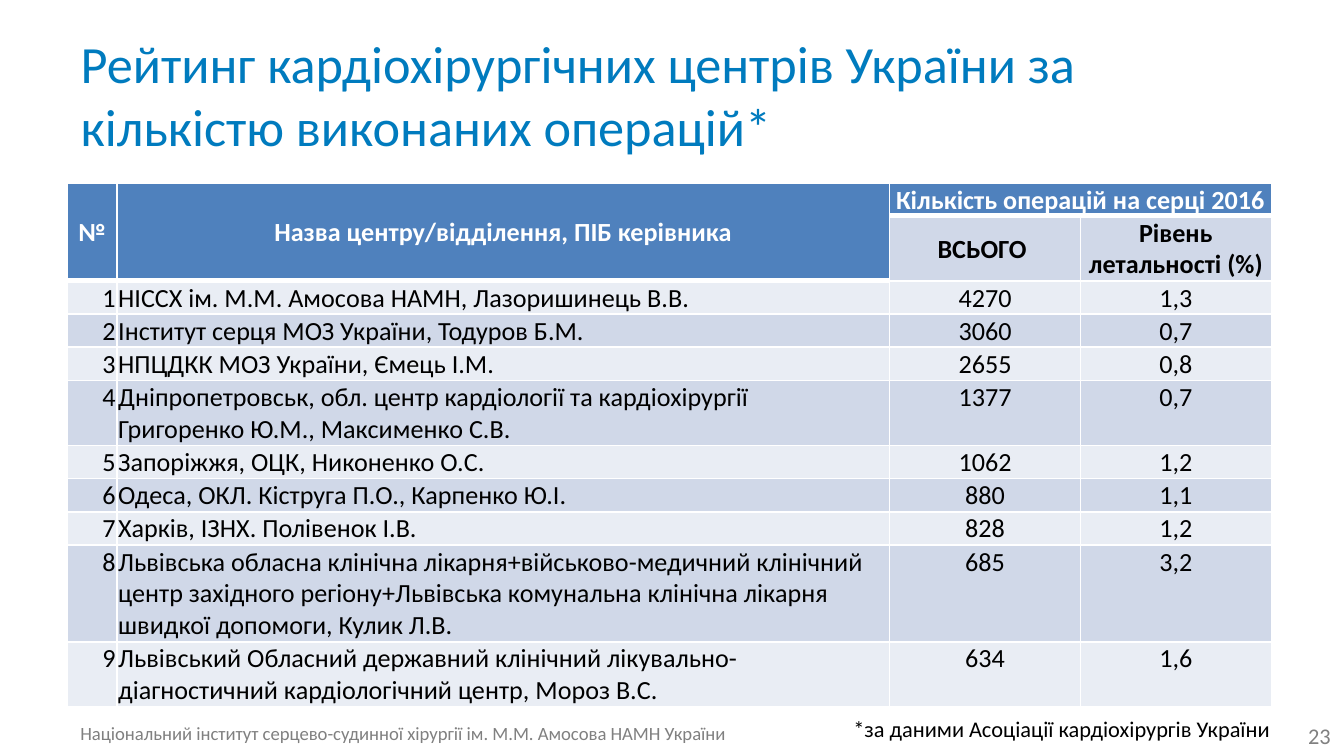
import pptx
import pptx.util
import pptx.dml.color
import pptx.enum.text
import pptx.oxml
import pptx.oxml.ns

Inch = pptx.util.Inches
Align = pptx.enum.text.PP_ALIGN
Anchor = pptx.enum.text.MSO_ANCHOR

WIDE = 10
HIGH = WIDE * 9 / 16
LEFT = 0.5
FONT = "Calibri"
WHITE, BLACK, GREY = "FFFFFF", "000000", "808080"
TITLE, HEAD, DARK, LIGHT = "007BBE", "4F81BD", "D0D8E8", "E9EDF4"

COLS = [0.37, 5.75, 1.42, 1.42]
# Least row heights; rows grow with their text
ROW = 0.21
TALL = {1: 0.46, 5: 2 * ROW}

# Name, total, mortality
CENTERS = [
    ("НІССХ ім. М.М. Амосова НАМН, Лазоришинець В.В.", "4270", "1,3"),
    ("Інститут серця МОЗ України, Тодуров Б.М.", "3060", "0,7"),
    ("НПЦДКК МОЗ України, Ємець І.М.", "2655", "0,8"),
    ("Дніпропетровськ, обл. центр кардіології та кардіохірургії\n"
     "Григоренко Ю.М., Максименко С.В.", "1377", "0,7"),
    ("Запоріжжя, ОЦК, Никоненко О.С.", "1062", "1,2"),
    ("Одеса, ОКЛ. Кіструга П.О., Карпенко Ю.І.", "880", "1,1"),
    ("Харків, ІЗНХ. Полівенок І.В.", "828", "1,2"),
    ("Львівська обласна клінічна лікарня+військово-медичний клінічний "
     "центр західного регіону+Львівська комунальна клінічна лікарня "
     "швидкої допомоги, Кулик Л.В.", "685", "3,2"),
    ("Львівський Обласний державний клінічний лікувально-діагностичний "
     "кардіологічний центр, Мороз В.С.", "634", "1,6"),
]


def color(code):
    return pptx.dml.color.RGBColor.from_string(code)


def write(frame, text, size, code, align=Align.LEFT, bold=False):
    para = frame.paragraphs[0]
    para.alignment = align
    for num, line in enumerate(text.split("\n")):
        if num:
            para.add_line_break()
        run = para.add_run()
        run.text = line
        font = run.font
        font.name, font.size, font.bold = FONT, pptx.util.Pt(size), bold
        font.color.rgb = color(code)


def label(slide, box, text, size, code, align=Align.LEFT, anchor=Anchor.TOP):
    frame = slide.shapes.add_textbox(*map(Inch, box)).text_frame
    frame.word_wrap = True
    frame.vertical_anchor = anchor
    write(frame, text, size, code, align)


def title(slide, box, text):
    shape = slide.shapes.title
    shape.left, shape.top, shape.width, shape.height = map(Inch, box)
    frame = shape.text_frame
    frame.auto_size = pptx.enum.text.MSO_AUTO_SIZE.NONE
    frame.vertical_anchor = Anchor.MIDDLE
    write(frame, text, 28, TITLE)


def style(cell, fill, under=1):
    """Fill, margins and white borders of one cell."""
    cell.fill.solid()
    cell.fill.fore_color.rgb = color(fill)
    cell.margin_left = cell.margin_right = cell.margin_top = Inch(0.01)
    cell.margin_bottom = 0
    props = cell._tc.get_or_add_tcPr()
    space = pptx.oxml.ns.nsdecls("a")
    for spot, side in enumerate("LRTB"):
        width = pptx.util.Pt(under if side == "B" else 1)
        props.insert(spot, pptx.oxml.parse_xml(
            f'<a:ln{side} {space} w="{width}"><a:solidFill>'
            f'<a:srgbClr val="{WHITE}"/></a:solidFill></a:ln{side}>'))


def header(table):
    # The first two columns span both rows, the last two share a heading
    for row in range(2):
        for col in range(4):
            sub = row == 1 and col > 1
            style(table.cell(row, col), DARK if sub else HEAD, 1 if sub else 3)
    for start, end in [((0, 0), (1, 0)), ((0, 1), (1, 1)), ((0, 2), (0, 3))]:
        table.cell(*start).merge(table.cell(*end))
    heads = [
        (0, 0, "№", WHITE, Anchor.MIDDLE),
        (0, 1, "Назва центру/відділення, ПІБ керівника", WHITE, Anchor.MIDDLE),
        (0, 2, "Кількість операцій на серці 2016", WHITE, Anchor.BOTTOM),
        (1, 2, "ВСЬОГО ", BLACK, Anchor.MIDDLE),
        (1, 3, "Рівень летальності (%)", BLACK, Anchor.MIDDLE),
    ]
    for row, col, text, code, anchor in heads:
        cell = table.cell(row, col)
        cell.vertical_anchor = anchor
        write(cell.text_frame, text, 14, code, Align.CENTER, True)


def body(table):
    sides = [Align.RIGHT, Align.LEFT, Align.CENTER, Align.CENTER]
    for num, center in enumerate(CENTERS, 1):
        values = (str(num),) + center
        for col, (text, side) in enumerate(zip(values, sides)):
            cell = table.cell(num + 1, col)
            style(cell, LIGHT if num % 2 else DARK)
            write(cell.text_frame, text, 14, BLACK, side)


def rating(slide, top, height):
    shape = slide.shapes.add_table(
        len(CENTERS) + 2, len(COLS), Inch(LEFT), Inch(top),
        Inch(sum(COLS)), Inch(height))
    table = shape.table
    for col, width in zip(table.columns, COLS):
        col.width = Inch(width)
    for num, row in enumerate(table.rows):
        row.height = Inch(TALL.get(num, ROW))
    # Changed rows reset the frame, so its size comes last
    shape.width, shape.height = Inch(8.95), Inch(height)
    header(table)
    body(table)


def main():
    deck = pptx.Presentation()
    deck.slide_width, deck.slide_height = Inch(WIDE), Inch(HIGH)
    slide = deck.slides.add_slide(deck.slide_layouts[5])

    # Title and table
    title(slide, (LEFT, 0.23, 8.25, 0.94),
          "Рейтинг кардіохірургічних центрів України за "
          "кількістю виконаних операцій*")
    rating(slide, 1.36, 3.89)

    # Footer, page number and source note
    label(slide, (LEFT, HIGH - 0.3, 5.33, 0.27),
          "Національний інститут серцево-судинної хірургії "
          "ім. М.М. Амосова НАМН України", 10, GREY)
    label(slide, (WIDE - 2.33, HIGH - 0.3, 2.33, 0.3), "23", 12, GREY,
          Align.RIGHT, Anchor.MIDDLE)
    label(slide, (6.2, HIGH - 0.35, 3.35, 0.3),
          "*за даними Асоціації кардіохірургів України", 12, BLACK,
          Align.RIGHT)
    deck.save("out.pptx")


if __name__ == "__main__":
    main()
